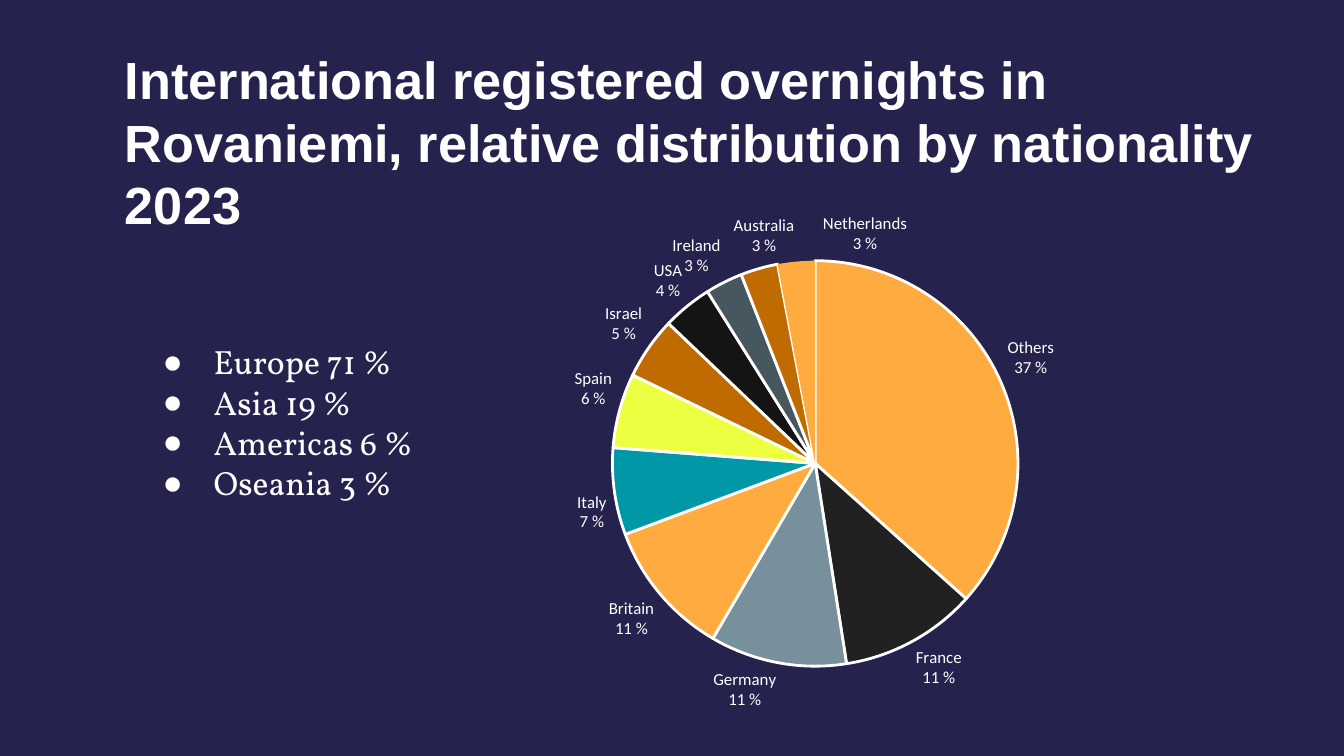
from dataclasses import dataclass

from lxml import etree
from pptx import Presentation
from pptx.chart.data import CategoryChartData
from pptx.dml.color import RGBColor
from pptx.enum.chart import XL_CHART_TYPE, XL_LABEL_POSITION
from pptx.enum.text import MSO_ANCHOR, MSO_AUTO_SIZE, PP_ALIGN
from pptx.oxml import parse_xml
from pptx.oxml.ns import nsdecls, qn
from pptx.util import Inches, Pt

PIE = XL_CHART_TYPE.PIE
OUTER = XL_LABEL_POSITION.OUTSIDE_END
TOP = MSO_ANCHOR.TOP
FIXED = MSO_AUTO_SIZE.NONE
LEFT = PP_ALIGN.LEFT


@dataclass(frozen=True)
class Theme:
    back: str = "26224E"
    text: str = "FFFFFF"
    orange: str = "FFAB40"
    ink: str = "212121"
    slate: str = "78909C"
    teal: str = "0097A7"
    lime: str = "EEFF41"
    brown: str = "BF6B00"
    coal: str = "141414"
    steel: str = "465760"
    head: str = "Arial"
    body: str = "Vollkorn"
    chart: str = "Calibri"
    head_size: int = 28
    body_size: int = 18
    chart_size: int = 10
    label_size: int = 9


THEME = Theme()
TITLE = ("International registered overnights in Rovaniemi, "
         "relative distribution by nationality 2023")
REGIONS = ["Europe 71 %", "Asia 19 %", "Americas 6 %", "Oseania 3 %"]
SHARES = [
    ("Others", 37, THEME.orange),
    ("France", 11, THEME.ink),
    ("Germany", 11, THEME.slate),
    ("Britain", 11, THEME.orange),
    ("Italy", 7, THEME.teal),
    ("Spain", 6, THEME.lime),
    ("Israel", 5, THEME.brown),
    ("USA", 4, THEME.coal),
    ("Ireland", 3, THEME.steel),
    ("Australia", 3, THEME.brown),
    ("Netherlands", 3, THEME.orange),
]
SHIFTS = {"Australia": (0.03, -0.01), "Netherlands": (0.09, 0)}
PLOT = {"x": 0.33, "y": 0.2, "w": 0.35, "h": 0.71}


def color(code):
    return RGBColor.from_string(code)


def style(font, name, size, bold=False):
    font.name = name
    font.size = Pt(size)
    font.bold = bold
    font.color.rgb = color(THEME.text)


def place(shape, left, top, width, height):
    shape.left, shape.top = Inches(left), Inches(top)
    shape.width, shape.height = Inches(width), Inches(height)


def set_frame(frame, side, edge):
    frame.word_wrap = True
    frame.auto_size = FIXED
    frame.vertical_anchor = TOP
    frame.margin_left = frame.margin_right = Inches(side)
    frame.margin_top = frame.margin_bottom = Inches(edge)


def add_run(para, text, name, size, bold=False):
    run = para.add_run()
    run.text = text
    style(run.font, name, size, bold)


def add_title(slide):
    shape = slide.shapes.title
    place(shape, 0.83, 0.25, 8.6, 1.53)
    set_frame(shape.text_frame, 0.1, 0.1)
    para = shape.text_frame.paragraphs[0]
    para.alignment = LEFT
    add_run(para, TITLE, THEME.head, THEME.head_size, True)


def add_bullet(para):
    props = para._p.get_or_add_pPr()
    props.set("marL", str(Inches(0.5)))
    props.set("indent", str(Inches(-0.38)))
    tint = etree.SubElement(props, qn("a:buClr"))
    etree.SubElement(tint, qn("a:srgbClr"), val=THEME.text)
    etree.SubElement(props, qn("a:buFont"), typeface=THEME.head)
    etree.SubElement(props, qn("a:buChar"), char="●")


def add_list(slide):
    shape = slide.placeholders[1]
    place(shape, 0.99, 2.49, 2.9, 1.31)
    frame = shape.text_frame
    set_frame(frame, 0.1, 0.05)
    for i, text in enumerate(REGIONS):
        para = frame.add_paragraph() if i else frame.paragraphs[0]
        add_bullet(para)
        para.space_before = Pt(0)
        add_run(para, text, THEME.body, THEME.body_size)


def make_layout(items):
    parts = "".join(f'<c:{key} val="{val}"/>' for key, val in items.items())
    return parse_xml(f'<c:layout {nsdecls("c")}><c:manualLayout>'
                     f'{parts}</c:manualLayout></c:layout>')


def set_plot(chart):
    area = chart._chartSpace.chart.plotArea
    for old in area.findall(qn("c:layout")):
        area.remove(old)
    modes = {"layoutTarget": "inner", "xMode": "edge", "yMode": "edge"}
    area.insert(0, make_layout({**modes, **PLOT}))


def set_slice(point, name, share, fill, edge):
    point.format.fill.solid()
    point.format.fill.fore_color.rgb = color(fill)
    line = point.format.line
    if edge:
        line.color.rgb = color(THEME.text)
        line.width = Pt(1.5)
    else:
        line.fill.background()
    label = point.data_label
    frame = label.text_frame
    add_run(frame.paragraphs[0], name, THEME.chart, THEME.label_size)
    add_run(frame.add_paragraph(), f"{share} %",
            THEME.chart, THEME.label_size)
    label.position = OUTER


def shift_labels(labels):
    node = labels._element
    for lead in node.findall(qn("c:showLeaderLines")):
        lead.set("val", "0")
    for label, (name, _, _) in zip(node.findall(qn("c:dLbl")), SHARES):
        if name in SHIFTS:
            across, down = SHIFTS[name]
            label.insert(1, make_layout({"x": across, "y": down}))


def add_pie(slide):
    data = CategoryChartData()
    data.categories = [str(i + 1) for i in range(len(SHARES))]
    data.add_series("Series 1", [share for _, share, _ in SHARES])
    box = [Inches(val) for val in (1.41, 1.09, 9.22, 4.25)]
    chart = slide.shapes.add_chart(PIE, *box, data).chart
    chart.has_legend = False
    chart.has_title = False
    style(chart.font, THEME.chart, THEME.chart_size)
    set_plot(chart)
    plot = chart.plots[0]
    plot.vary_by_categories = True
    series = plot.series[0]
    labels = series.data_labels
    labels.show_percentage = True
    labels.show_value = False
    labels.number_format = "0"
    labels.number_format_is_linked = False
    labels.position = OUTER
    style(labels.font, THEME.chart, THEME.label_size)
    last = len(SHARES) - 1
    for i, (name, share, fill) in enumerate(SHARES):
        set_slice(series.points[i], name, share, fill, i < last)
    shift_labels(labels)


def main():
    deck = Presentation()
    deck.slide_width = Inches(10)
    deck.slide_height = deck.slide_width * 9 // 16
    slide = deck.slides.add_slide(deck.slide_layouts[1])
    slide.background.fill.solid()
    slide.background.fill.fore_color.rgb = color(THEME.back)
    add_title(slide)
    add_pie(slide)
    add_list(slide)
    deck.save("out.pptx")


if __name__ == "__main__":
    main()
